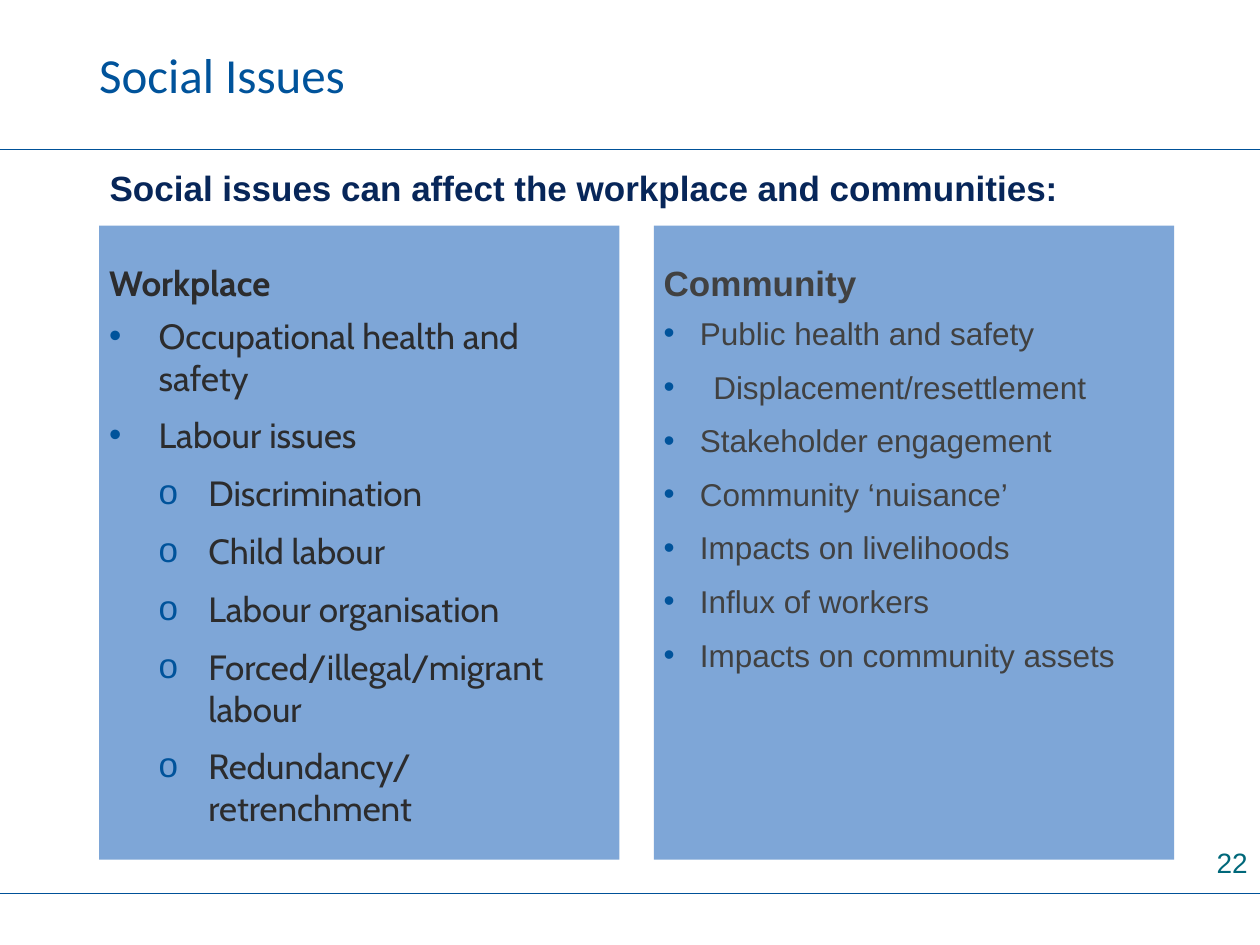
from dataclasses import dataclass

import pptx
import pptx.dml.color
import pptx.enum.shapes
import pptx.enum.text
import pptx.oxml
import pptx.oxml.ns
import pptx.util
from lxml import etree

Cm = pptx.util.Cm
Pt = pptx.util.Pt
RGBColor = pptx.dml.color.RGBColor
Align = pptx.enum.text.PP_ALIGN
Anchor = pptx.enum.text.MSO_ANCHOR
AutoSize = pptx.enum.text.MSO_AUTO_SIZE
qn = pptx.oxml.ns.qn

RULE_BLUE = RGBColor(0x00, 0x51, 0x98)
TITLE_BLUE = RGBColor(0x00, 0x53, 0x9B)
NAVY = RGBColor(0x07, 0x26, 0x59)
PANEL_BLUE = RGBColor(0x7E, 0xA6, 0xD7)
CHARCOAL = RGBColor(0x2C, 0x2C, 0x2D)
GREY = RGBColor(0x41, 0x41, 0x41)
TEAL = RGBColor(0x00, 0x68, 0x7A)

SLIDE_WIDTH = 25.4
SLIDE_HEIGHT = 19.05
MARGIN = 2.0
HEADER_BOTTOM = 3.0
FOOTER_TOP = 18.0
PANEL_TOP = 4.55
PANEL_WIDTH = 10.49
PANEL_HEIGHT = 12.78
PANEL_STEP = 11.18
PANEL_INSET = 0.2
HANG = 1.0


@dataclass(frozen=True)
class Style:
    font: str
    size: float
    color: RGBColor
    bold: bool = False


@dataclass(frozen=True)
class Item:
    text: str
    indent: float = HANG
    hang: float = HANG
    bullet: str = "•"


@dataclass(frozen=True)
class Panel:
    heading: str
    heading_style: Style
    item_style: Style
    items: tuple[Item, ...]


def sub_item(text: str) -> Item:
    return Item(text, 2 * HANG, HANG, "o")


def tight_item(text: str) -> Item:
    return Item(text, 0.73, 0.73)


PANELS = (
    Panel(
        "Workplace",
        Style("Cabin", 20, CHARCOAL, True),
        Style("Cabin", 20, CHARCOAL),
        (
            Item("Occupational health and safety"),
            Item("Labour issues"),
            sub_item("Discrimination"),
            sub_item("Child labour"),
            sub_item("Labour organisation"),
            sub_item("Forced/illegal/migrant labour"),
            sub_item("Redundancy/retrenchment"),
        ),
    ),
    Panel(
        "Community",
        Style("Arial", 20, GREY, True),
        Style("Arial", 18, GREY),
        (
            tight_item("Public health and safety"),
            Item("Displacement/resettlement"),
            tight_item("Stakeholder engagement"),
            tight_item("Community ‘nuisance’"),
            tight_item("Impacts on livelihoods"),
            tight_item("Influx of workers"),
            tight_item("Impacts on community assets"),
        ),
    ),
)


def add_run(paragraph, text: str, style: Style) -> None:
    run = paragraph.add_run()
    run.text = text
    run.font.name = style.font
    run.font.size = Pt(style.size)
    run.font.bold = style.bold
    run.font.color.rgb = style.color


def add_label(slide, left: float, top: float, width: float, height: float,
              text: str, style: Style, align=Align.LEFT):
    label = slide.shapes.add_textbox(Cm(left), Cm(top), Cm(width), Cm(height))
    frame = label.text_frame
    frame.word_wrap = True
    frame.paragraphs[0].alignment = align
    add_run(frame.paragraphs[0], text, style)
    return frame


def add_rule(slide, y: float) -> None:
    rule = slide.shapes.add_connector(
        pptx.enum.shapes.MSO_CONNECTOR.STRAIGHT, 0, Cm(y), Cm(SLIDE_WIDTH), Cm(y))
    rule.line.color.rgb = RULE_BLUE
    rule.line.width = Pt(0.25)
    properties = rule._element.find(qn("p:spPr"))
    etree.SubElement(properties, qn("a:effectLst"))


def set_bullet(paragraph, item: Item) -> None:
    properties = paragraph._p.get_or_add_pPr()
    properties.set("marL", str(int(Cm(item.indent))))
    properties.set("indent", str(-int(Cm(item.hang))))
    color = etree.SubElement(properties, qn("a:buClr"))
    etree.SubElement(color, qn("a:srgbClr"), val=str(TITLE_BLUE))
    etree.SubElement(properties, qn("a:buFont"), typeface="Arial")
    etree.SubElement(properties, qn("a:buChar"), char=item.bullet)


def add_panel(slide, left: float, panel: Panel) -> None:
    box = slide.shapes.add_shape(
        pptx.enum.shapes.MSO_SHAPE.RECTANGLE,
        Cm(left), Cm(PANEL_TOP), Cm(PANEL_WIDTH), Cm(PANEL_HEIGHT))
    box.shadow.inherit = False
    box.fill.solid()
    box.fill.fore_color.rgb = PANEL_BLUE
    box.line.fill.background()

    frame = box.text_frame
    frame.word_wrap = True
    frame.vertical_anchor = Anchor.TOP
    frame.margin_left = frame.margin_right = frame.margin_bottom = Cm(PANEL_INSET)
    frame.margin_top = Cm(PANEL_INSET + 0.1)

    heading = frame.paragraphs[0]
    heading.alignment = Align.LEFT
    heading.line_spacing = 1.5
    heading.space_after = Pt(3)
    add_run(heading, panel.heading, panel.heading_style)

    for item in panel.items:
        paragraph = frame.add_paragraph()
        set_bullet(paragraph, item)
        paragraph.alignment = Align.LEFT
        paragraph.space_before = Pt(3)
        paragraph.space_after = Pt(6)
        add_run(paragraph, item.text, panel.item_style)


def main() -> None:
    deck = pptx.Presentation()
    deck.slide_width = Cm(SLIDE_WIDTH)
    deck.slide_height = Cm(SLIDE_HEIGHT)
    slide = deck.slides.add_slide(deck.slide_layouts[6])

    for y in (HEADER_BOTTOM, FOOTER_TOP):
        add_rule(slide, y)

    title = add_label(slide, MARGIN, 0, 16.4, HEADER_BOTTOM,
                      "Social Issues", Style("Calibri", 28, TITLE_BLUE))
    title.vertical_anchor = Anchor.MIDDLE
    title.margin_left = title.margin_right = 0
    title.margin_top = title.margin_bottom = 0

    for column, panel in enumerate(PANELS):
        add_panel(slide, MARGIN + column * PANEL_STEP, panel)

    statement = add_label(slide, 1.96, 2.8, 19.76, 1.55,
                          "Social issues can affect the workplace and communities:",
                          Style("Arial", 20, NAVY, True))
    statement.word_wrap = False
    statement.auto_size = AutoSize.SHAPE_TO_FIT_TEXT
    statement.paragraphs[0].line_spacing = 1.5

    add_label(slide, 19.48, 16.92, 5.92, 1.32, "22",
              Style("Arial", 16, TEAL), Align.RIGHT)

    deck.save("out.pptx")


if __name__ == "__main__":
    main()
